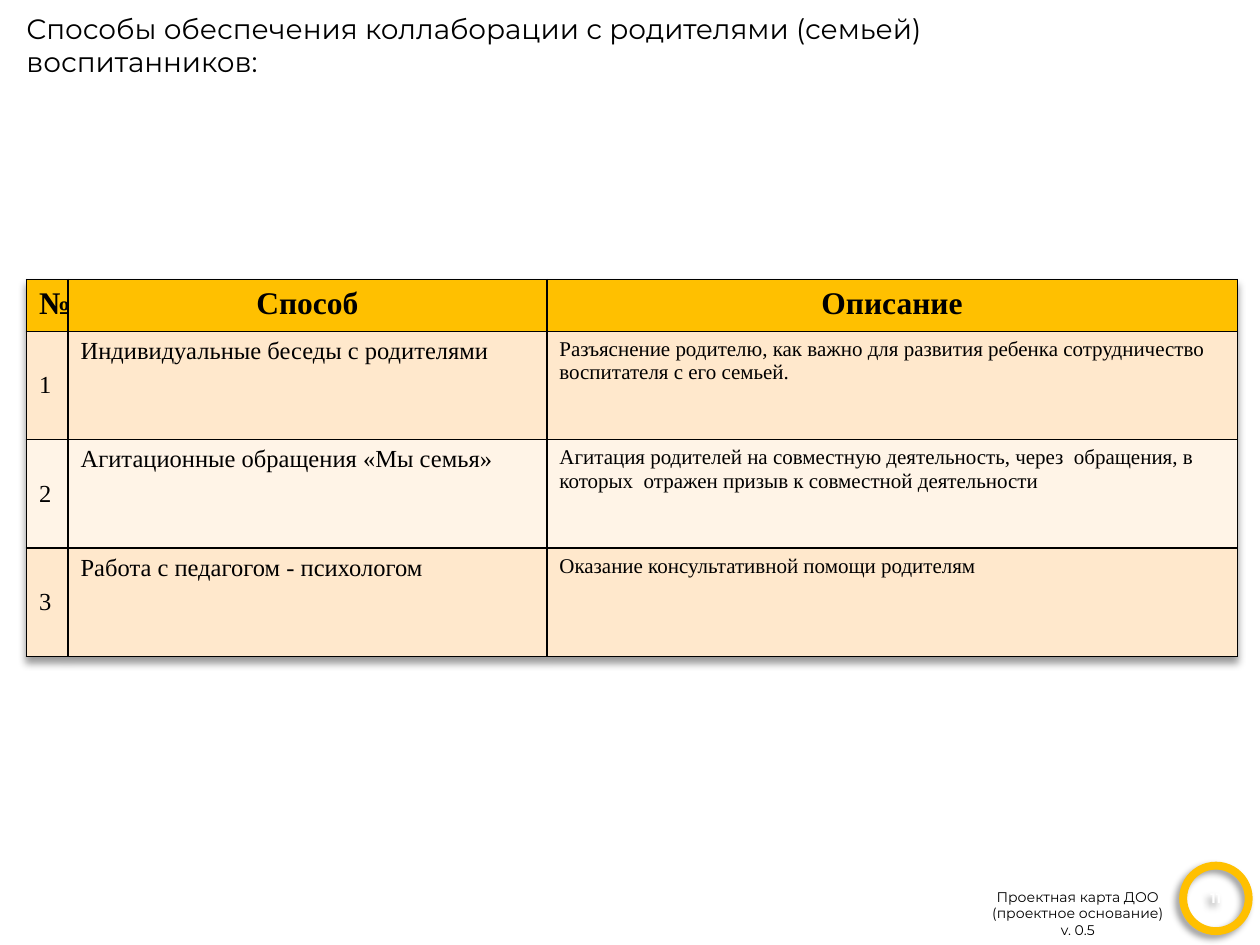
from lxml import etree
from pptx import Presentation
from pptx import util as u
from pptx.dml.color import RGBColor
from pptx.enum import shapes, text
from pptx.oxml import parse_xml
from pptx.oxml.ns import nsdecls, qn

WIDTH, HEIGHT = 10, 7.5
BLACK, WHITE, AMBER = "000000", "FFFFFF", "FFC000"
BANDS = ("FFE8CC", "FFF4E7")
HEADER = ("№", "Способ", "Описание")
METHODS = (
    ("Индивидуальные беседы с родителями",
     "Разъяснение родителю, как важно для развития ребенка сотрудничество воспитателя с его семьей."),
    ("Агитационные обращения «Мы семья»",
     "Агитация родителей на совместную деятельность, через  обращения, в которых  отражен призыв к совместной деятельности"),
    ("Работа с педагогом - психологом",
     "Оказание консультативной помощи родителям"),
)
FOOTER = ("Проектная карта ДОО", "(проектное основание)", "v. 0.5")


def color(value):
    return RGBColor.from_string(value)


def share(left, top, width, height):
    return [u.Inches(round(part * size, 2)) for part, size in
            zip((left, top, width, height), (WIDTH, HEIGHT) * 2)]


def write(paragraph, words, size, font="Montserrat", fill=BLACK, bold=False, align=text.PP_ALIGN.LEFT):
    paragraph.text = words
    paragraph.alignment = align
    paragraph.font.size = u.Pt(size)
    paragraph.font.name = font
    paragraph.font.bold = bold
    paragraph.font.color.rgb = color(fill)


def shadow(blur, distance, direction):
    return parse_xml(
        f'<a:effectLst {nsdecls("a")}><a:outerShdw blurRad="{u.Pt(blur)}" dist="{u.Pt(distance)}" '
        f'dir="{direction * 60000}" algn="t" rotWithShape="0"><a:srgbClr val="{BLACK}">'
        '<a:alpha val="40000"/></a:srgbClr></a:outerShdw></a:effectLst>')


def add_heading(slide, box):
    title = slide.shapes.title
    title.left, title.top, title.width, title.height = box
    frame = title.text_frame
    frame.word_wrap = True
    frame.auto_size = text.MSO_AUTO_SIZE.NONE
    frame.vertical_anchor = text.MSO_ANCHOR.TOP
    write(frame.paragraphs[0], "Способы обеспечения коллаборации с родителями (семьей) воспитанников:", 16)
    frame.paragraphs[0].line_spacing = 1.0


def outline_cell(cell):
    properties = cell._tc.get_or_add_tcPr()
    for index, side in enumerate(("lnL", "lnR", "lnT", "lnB")):
        line = etree.Element(qn(f"a:{side}"), w=str(u.Pt(1)))
        fill = etree.SubElement(line, qn("a:solidFill"))
        etree.SubElement(fill, qn("a:srgbClr"), val=BLACK)
        properties.insert(index, line)


def add_methods_table(slide, box):
    rows = [HEADER] + [(str(number), *method) for number, method in enumerate(METHODS, 1)]
    table = slide.shapes.add_table(len(rows), len(HEADER), *box).table
    table._tbl.tblPr.insert(0, shadow(4, 3, 90))
    for column, width in zip(table.columns, (0.33, 3.8, 5.48)):
        column.width = u.Inches(width)
    for row_index, row in enumerate(rows):
        header = row_index == 0
        table.rows[row_index].height = u.Inches(0.41 if header else 0.86)
        for column_index, words in enumerate(row):
            cell = table.cell(row_index, column_index)
            cell.fill.solid()
            cell.fill.fore_color.rgb = color(AMBER if header else BANDS[(row_index - 1) % 2])
            outline_cell(cell)
            if column_index == 0 and not header:
                cell.vertical_anchor = text.MSO_ANCHOR.MIDDLE
            size = 18 if header else (14, 14, 12)[column_index]
            align = text.PP_ALIGN.CENTER if header else text.PP_ALIGN.LEFT
            write(cell.text_frame.paragraphs[0], words, size, "Times New Roman", bold=header, align=align)


def add_footer(slide, box):
    frame = slide.shapes.add_textbox(*box).text_frame
    frame.word_wrap = False
    for index, words in enumerate(FOOTER):
        paragraph = frame.add_paragraph() if index else frame.paragraphs[0]
        write(paragraph, words, 8, align=text.PP_ALIGN.CENTER)


def add_page_badge(slide, box):
    badge = slide.shapes.add_shape(shapes.MSO_SHAPE.OVAL, *box)
    badge.fill.background()
    badge.line.color.rgb = color(AMBER)
    badge.line.width = u.Pt(4.5)
    badge._element.spPr.append(shadow(4, 3, 135))
    frame = badge.text_frame
    frame.vertical_anchor = text.MSO_ANCHOR.MIDDLE
    write(frame.paragraphs[0], "11", 8, fill=WHITE, bold=True, align=text.PP_ALIGN.CENTER)


def main():
    presentation = Presentation()
    presentation.slide_width, presentation.slide_height = u.Inches(WIDTH), u.Inches(HEIGHT)
    slide = presentation.slides.add_slide(presentation.slide_layouts[5])
    add_heading(slide, share(0.011, 0.005, 0.822, 0.085))
    add_methods_table(slide, share(0.021, 0.296, 0.961, 0.399))
    add_footer(slide, share(0.772, 0.933, 0.167, 0.067))
    add_page_badge(slide, share(0.939, 0.916, 0.052, 0.069))
    presentation.save("out.pptx")


if __name__ == "__main__":
    main()
